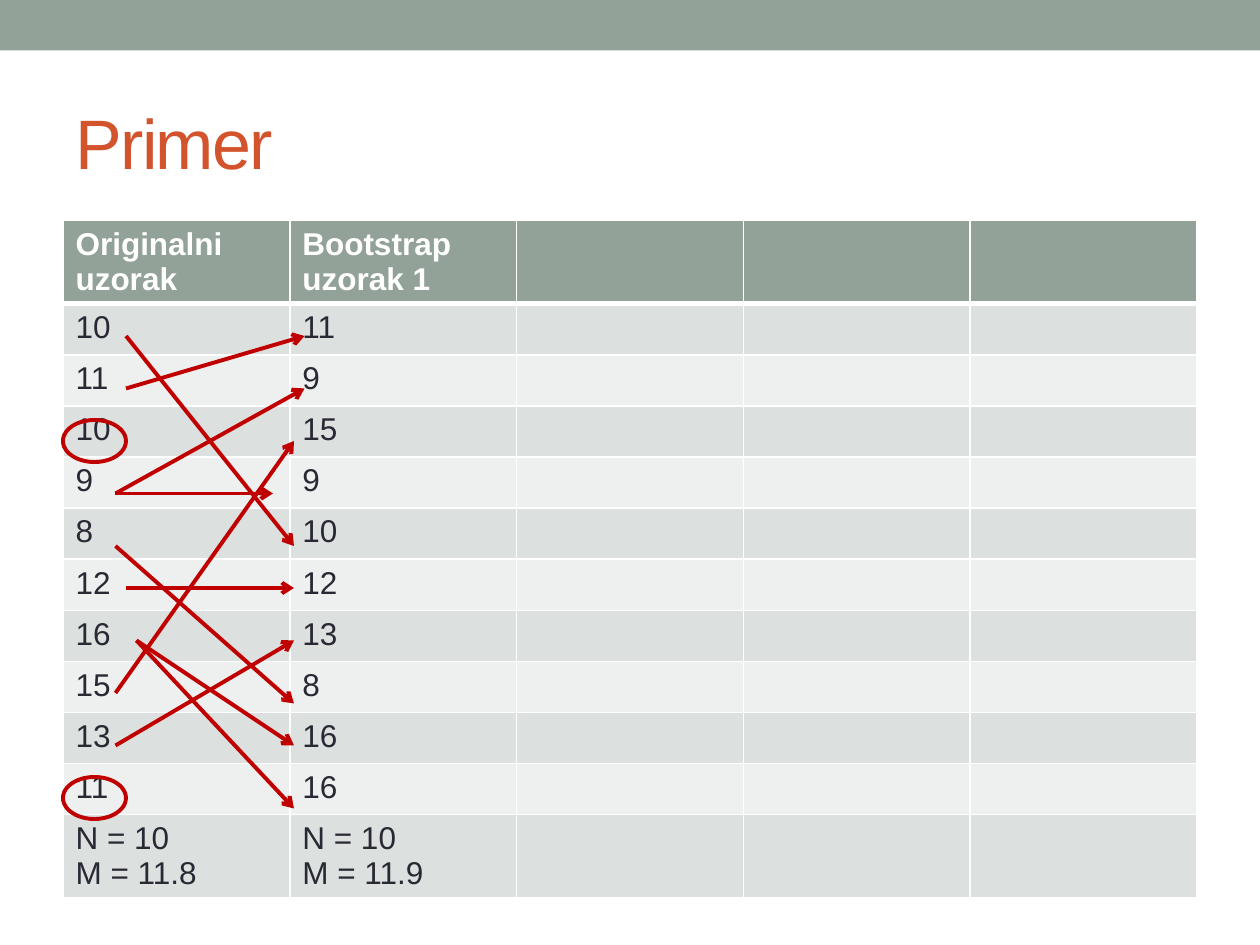
"""Build the bootstrap example slide with its table, arrows and rings."""
from pptx import Presentation
from pptx import util as u
from pptx.dml.color import RGBColor
from pptx.enum import shapes, text
from pptx.oxml import parse_xml
from pptx.oxml.ns import nsdecls, qn

SAGE = RGBColor(0x93, 0xA2, 0x99)
DARK = RGBColor(0xDC, 0xE0, 0xDE)
PALE = RGBColor(0xEE, 0xF0, 0xEF)
INK = RGBColor(0x29, 0x29, 0x34)
WHITE = RGBColor(0xFF, 0xFF, 0xFF)
RUST = RGBColor(0xD2, 0x53, 0x2C)
RED = RGBColor(0xC0, 0x00, 0x00)

LEFT = ["10", "11", "10", "9", "8", "12", "16", "15", "13", "11"]
RIGHT = ["11", "9", "15", "9", "10", "12", "13", "8", "16", "16"]
ROWS = [("Originalni uzorak", "Bootstrap uzorak 1"), *zip(LEFT, RIGHT),
        ("N = 10\nM = 11.8", "N = 10\nM = 11.9")]
ARROWS = [(72, 222, 174, 192), (66, 282, 174, 222), (66, 282, 156, 282),
          (66, 396, 168, 252), (72, 192, 168, 312), (72, 336, 168, 336),
          (66, 426, 168, 366), (66, 312, 168, 402), (78, 366, 168, 426),
          (78, 366, 168, 462)]


def assign(item, form):
    for key, value in form.items():
        setattr(item, key, value)


class Deck:
    face = "Arial"
    stroke = 2.25

    def __init__(self, wide, high):
        self.file = Presentation()
        assign(self.file, {"slide_width": u.Pt(wide), "slide_height": u.Pt(high)})
        self.slide = self.file.slides.add_slide(self.file.slide_layouts[5])
        self.items = self.slide.shapes

    def label(self, frame, words, size, color, bold=False):
        frame.text = words
        for para in frame.paragraphs:
            para.alignment = text.PP_ALIGN.LEFT
            for run in para.runs:
                assign(run.font, {"name": self.face, "size": u.Pt(size), "bold": bold})
                run.font.color.rgb = color

    def title(self, words, box):
        item = self.items.title
        assign(item, dict(zip(("left", "top", "width", "height"), map(u.Pt, box))))
        frame = item.text_frame
        self.label(frame, words, 40, RUST)
        assign(frame, {"vertical_anchor": text.MSO_ANCHOR.MIDDLE,
                       "word_wrap": True, "auto_size": text.MSO_AUTO_SIZE.NONE})
        frame.paragraphs[0].runs[0].font._element.set("spc", "-100")

    def shape(self, kind, box, fill=None, line=None):
        item = self.items.add_shape(kind, *map(u.Pt, box))
        item.shadow.inherit = False
        for part, color in ((item.fill, fill), (item.line.fill, line)):
            if color is None:
                part.background()
            else:
                part.solid()
                part.fore_color.rgb = color
        if line is not None:
            item.line.width = u.Pt(self.stroke)

    def arrow(self, ends):
        item = self.items.add_connector(shapes.MSO_CONNECTOR.STRAIGHT, *map(u.Pt, ends))
        item.line.color.rgb = RED
        item.line.width = u.Pt(self.stroke)
        props = item.element.spPr
        props.find(qn("a:ln")).append(parse_xml(f'<a:tailEnd {nsdecls("a")} type="arrow"/>'))
        props.append(parse_xml(f'<a:effectLst {nsdecls("a")}/>'))

    def edge(self, cell, top, base):
        props = cell._tc.get_or_add_tcPr()
        for side, width in (("L", 1), ("R", 1), ("T", top), ("B", base)):
            props.append(parse_xml(
                f'<a:ln{side} {nsdecls("a")} w="{int(u.Pt(width))}"><a:solidFill>'
                f'<a:srgbClr val="{WHITE}"/></a:solidFill></a:ln{side}>'))

    def table(self, rows, cols, box, high):
        grid = self.items.add_table(len(rows), cols, *map(u.Pt, box)).table
        for r, words in enumerate(rows):
            grid.rows[r].height = u.Pt(high)
            head = r == 0
            fill = SAGE if head else DARK if r % 2 else PALE
            for c in range(cols):
                cell = grid.cell(r, c)
                self.edge(cell, 3 if r == 1 else 1, 3 if head else 1)
                cell.fill.solid()
                cell.fill.fore_color.rgb = fill
                if c < len(words):
                    self.label(cell.text_frame, words[c], 18, WHITE if head else INK, head)


def main():
    deck = Deck(720, 540)
    deck.shape(shapes.MSO_SHAPE.RECTANGLE, (0, 0, 720, 28.8), fill=SAGE)
    deck.title("Primer", (36, 42, 648, 78))
    deck.table(ROWS, 5, (36, 126, 648, 350.4), 29.2)
    for ends in ARROWS:
        deck.arrow(ends)
    for top in (240, 444):
        deck.shape(shapes.MSO_SHAPE.OVAL, (36, top, 36, 24), line=RED)
    deck.file.save("out.pptx")


if __name__ == "__main__":
    main()
